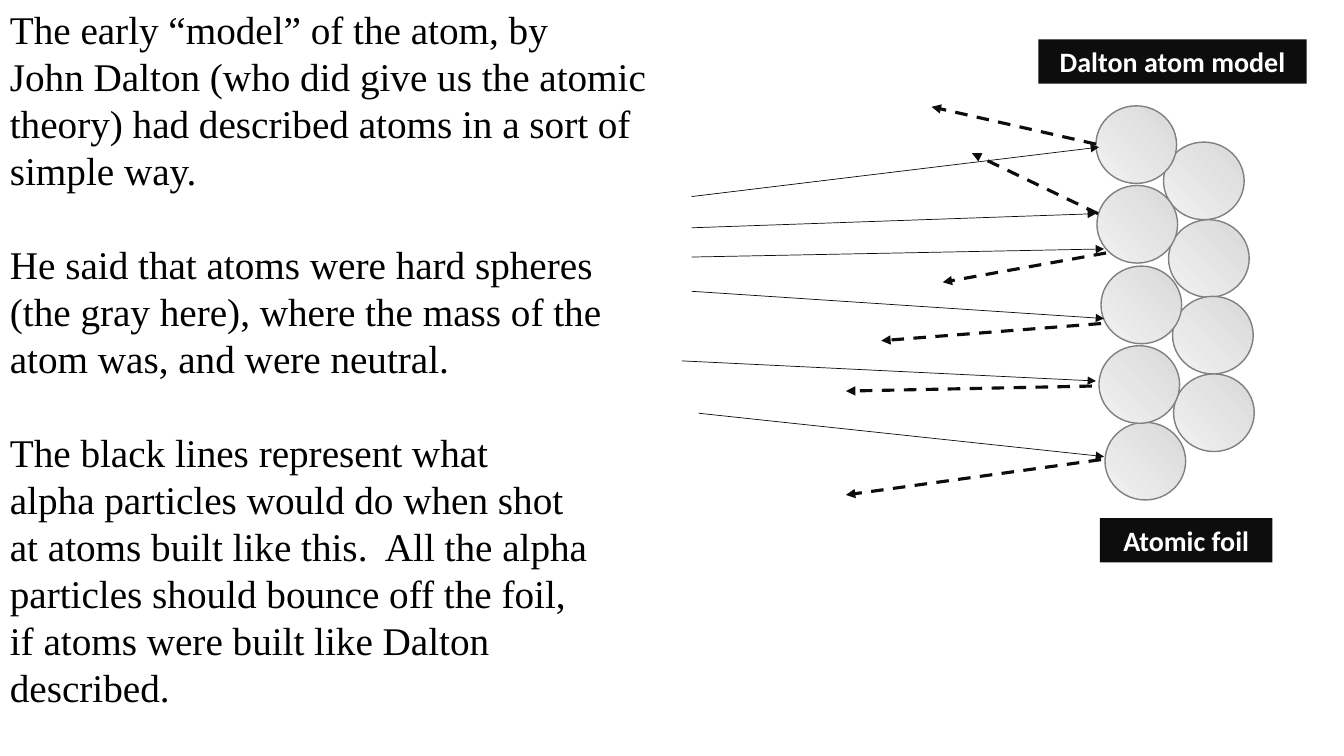
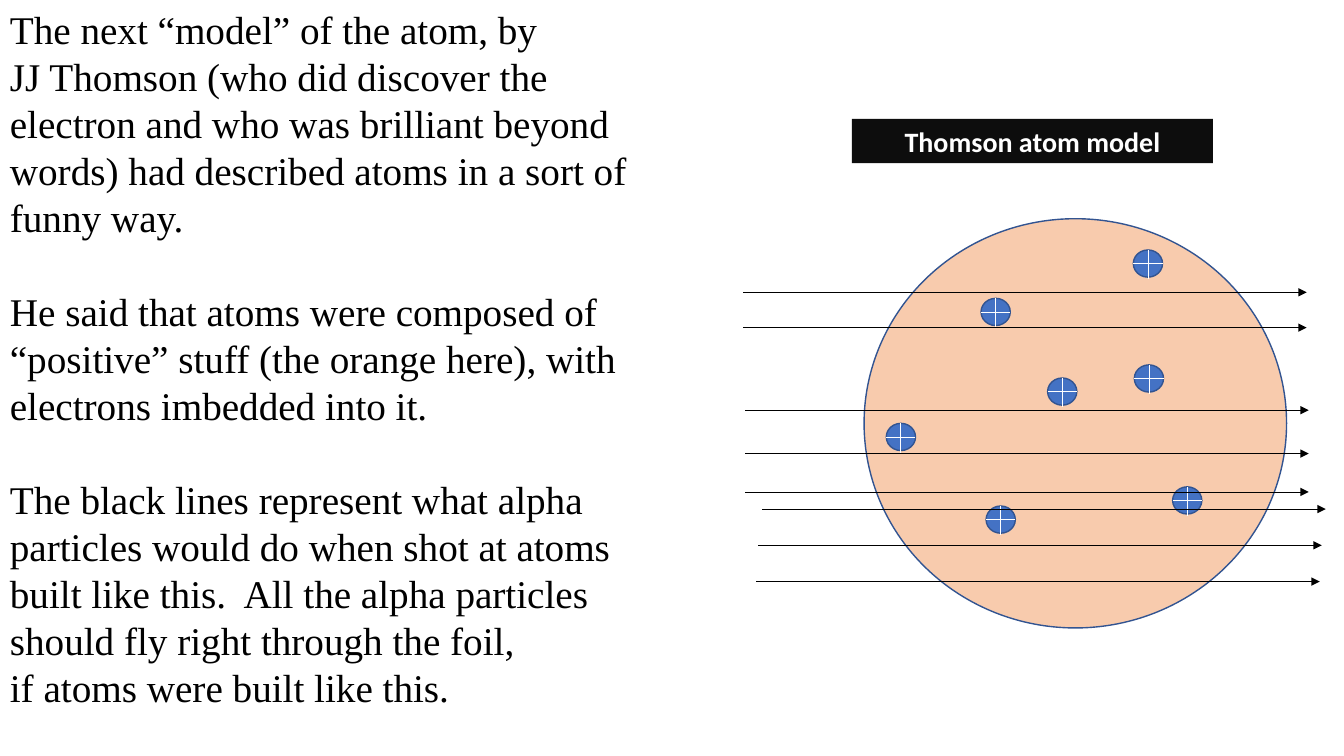
from pptx import Presentation
from pptx.dml.color import RGBColor
from pptx.enum.dml import MSO_LINE_DASH_STYLE as DASH
from pptx.enum.shapes import MSO_CONNECTOR as CONN, MSO_SHAPE as SHAPE
from pptx.enum.text import MSO_ANCHOR, PP_ALIGN
from pptx.oxml.ns import qn
from pptx.util import Inches, Pt
from lxml.etree import SubElement


class Deck:
    COLORS = {
        "text": "000000", "ink": "0D0D0D", "white": "FFFFFF",
        "atom_dark": "D8D8D8", "atom_light": "F2F2F2", "atom_edge": "808080",
        "positive": "F8CBAD", "electron": "4472C4", "edge": "325491",
    }
    BODY_FONT, LABEL_FONT = "Times New Roman", "Calibri"
    BODY_LINE = Pt(33.6)

    def __init__(self):
        self.prs = Presentation()
        self.prs.slide_width, self.prs.slide_height = Inches(13.33), Inches(7.5)
        self.s = None

    def color(self, name):
        return RGBColor.from_string(self.COLORS[name])

    def slide(self):
        self.s = self.prs.slides.add_slide(self.prs.slide_layouts[6])

    def run(self, p, text, font, size, color, bold=False):
        r = p.add_run()
        r.text = text
        r.font.name, r.font.size, r.font.bold = font, Pt(size), bold
        r.font.color.rgb = self.color(color)

    def body(self, paragraphs):
        """Add the text column; a newline in a paragraph is a line break."""
        tf = self.s.shapes.add_textbox(0, 0, Inches(6.57), Inches(7.17)).text_frame
        tf.word_wrap = True
        for i, text in enumerate(paragraphs):
            p = tf.add_paragraph() if i else tf.paragraphs[0]
            p.line_spacing = self.BODY_LINE
            p.space_before = self.BODY_LINE if i else 0
            for j, line in enumerate(text.split("\n")):
                if j:
                    p.add_line_break()
                self.run(p, line, self.BODY_FONT, 28, "text")

    def shape(self, kind, x, y, w, h, fill, edge=None):
        """Add a preset shape; a pair of fill colours makes a gradient."""
        sp = self.s.shapes.add_shape(kind, *map(Inches, (x, y, w, h)))
        sp.shadow.inherit = False
        if isinstance(fill, tuple):
            sp.fill.gradient()
            sp.fill.gradient_angle = 225
            for stop, name, pos in zip(sp.fill.gradient_stops, fill, (0, 1)):
                stop.color.rgb, stop.position = self.color(name), pos
        else:
            sp.fill.solid()
            sp.fill.fore_color.rgb = self.color(fill)
        if edge:
            sp.line.color.rgb, sp.line.width = self.color(edge), Pt(1)
        else:
            sp.line.fill.background()
        return sp

    def label(self, text, x, y, w):
        tf = self.shape(SHAPE.RECTANGLE, x, y, w, 0.44, "ink").text_frame
        tf.word_wrap, tf.vertical_anchor = True, MSO_ANCHOR.MIDDLE
        p = tf.paragraphs[0]
        p.alignment = PP_ALIGN.CENTER
        self.run(p, text, self.LABEL_FONT, 20, "white", bold=True)

    def line(self, x1, y1, x2, y2, color="ink", width=0.5, dash=None, arrow=True):
        c = self.s.shapes.add_connector(
            CONN.STRAIGHT, *map(Inches, (x1, y1, x2, y2)))
        c.line.color.rgb, c.line.width = self.color(color), Pt(width)
        if dash:
            c.line.dash_style = dash
        if arrow:
            SubElement(c.line._get_or_add_ln(), qn("a:tailEnd"), type="triangle")
        SubElement(c._element.spPr, qn("a:effectLst"))

    def atom(self, x, y):
        self.shape(SHAPE.OVAL, x, y, 0.8, 0.77, ("atom_dark", "atom_light"), "atom_edge")

    def electron(self, x, y):
        w, h = 0.29, 0.27
        self.shape(SHAPE.OVAL, x, y, w, h, "electron", "edge")
        self.line(x + w / 2, y, x + w / 2, y + w, "white", arrow=False)
        self.line(x + w, y + h / 2, x, y + h / 2, "white", arrow=False)


def dalton(deck):
    deck.slide()
    deck.body([
        "The early “model” of the atom, by \nJohn Dalton (who did give us the atomic "
        "theory) had described atoms in a sort of simple way.",
        "He said that atoms were hard spheres (the gray here), where the mass of the "
        "atom was, and were neutral.",
        "The black lines represent what \nalpha particles would do when shot \n"
        "at atoms built like this.  All the alpha particles should bounce off the foil, \n"
        "if atoms were built like Dalton described.",
    ])
    back = [(11.54, 1.41), (11.59, 2.18), (11.63, 2.94), (11.64, 3.71)]
    front = [(10.87, 1.05), (10.96, 4.19), (10.9, 3.43), (10.92, 2.64), (10.88, 1.84)]
    for x, y in back + front:
        deck.atom(x, y)
    incoming = [
        (6.86, 1.95, 10.9, 1.46), (6.86, 2.26, 10.87, 2.12), (6.86, 2.55, 10.95, 2.47),
        (6.86, 2.89, 10.95, 3.16), (6.76, 3.58, 10.87, 3.78), (6.93, 4.1, 10.95, 4.53),
    ]
    bounced = [
        (10.87, 1.43, 9.24, 1.06), (10.89, 2.12, 9.64, 1.52), (10.97, 2.51, 9.35, 2.8),
        (10.92, 3.21, 8.74, 3.38), (10.83, 3.83, 8.39, 3.88), (10.92, 4.56, 8.39, 4.91),
    ]
    for ends in incoming:
        deck.line(*ends)
    for ends in bounced:
        deck.line(*ends, width=2.25, dash=DASH.DASH)
    deck.label("Dalton atom model", 10.3, 0.39, 2.66)
    deck.label("Atomic foil", 10.91, 5.14, 1.71)


def thomson(deck):
    deck.slide()
    deck.body([
        "The next “model” of the atom, by \nJJ Thomson (who did discover the electron "
        "and who was brilliant beyond words) had described atoms in a sort of \nfunny way.",
        "He said that atoms were composed of “positive” stuff (the orange here), with "
        "electrons imbedded into it.",
        "The black lines represent what alpha particles would do when shot at atoms "
        "built like this.  All the alpha particles should fly right through the foil, \n"
        "if atoms were built like this.",
    ])
    deck.label("Thomson atom model", 8.45, 1.18, 3.58)
    deck.shape(SHAPE.OVAL, 8.57, 2.17, 4.19, 4.06, "positive", "edge")
    for x, y in [(9.73, 2.96), (11.25, 3.62), (8.79, 4.2), (10.39, 3.75),
                 (11.63, 4.83), (9.78, 5.02), (11.24, 2.48)]:
        deck.electron(x, y)
    for x, y in [(7.37, 2.9), (7.37, 3.25), (7.39, 4.07), (7.39, 4.5),
                 (7.39, 4.88), (7.52, 5.41), (7.5, 5.77), (7.56, 5.05)]:
        deck.line(x, y, x + 5.59, y, "text")


def main():
    deck = Deck()
    dalton(deck)
    thomson(deck)
    deck.prs.save("out.pptx")


if __name__ == "__main__":
    main()
